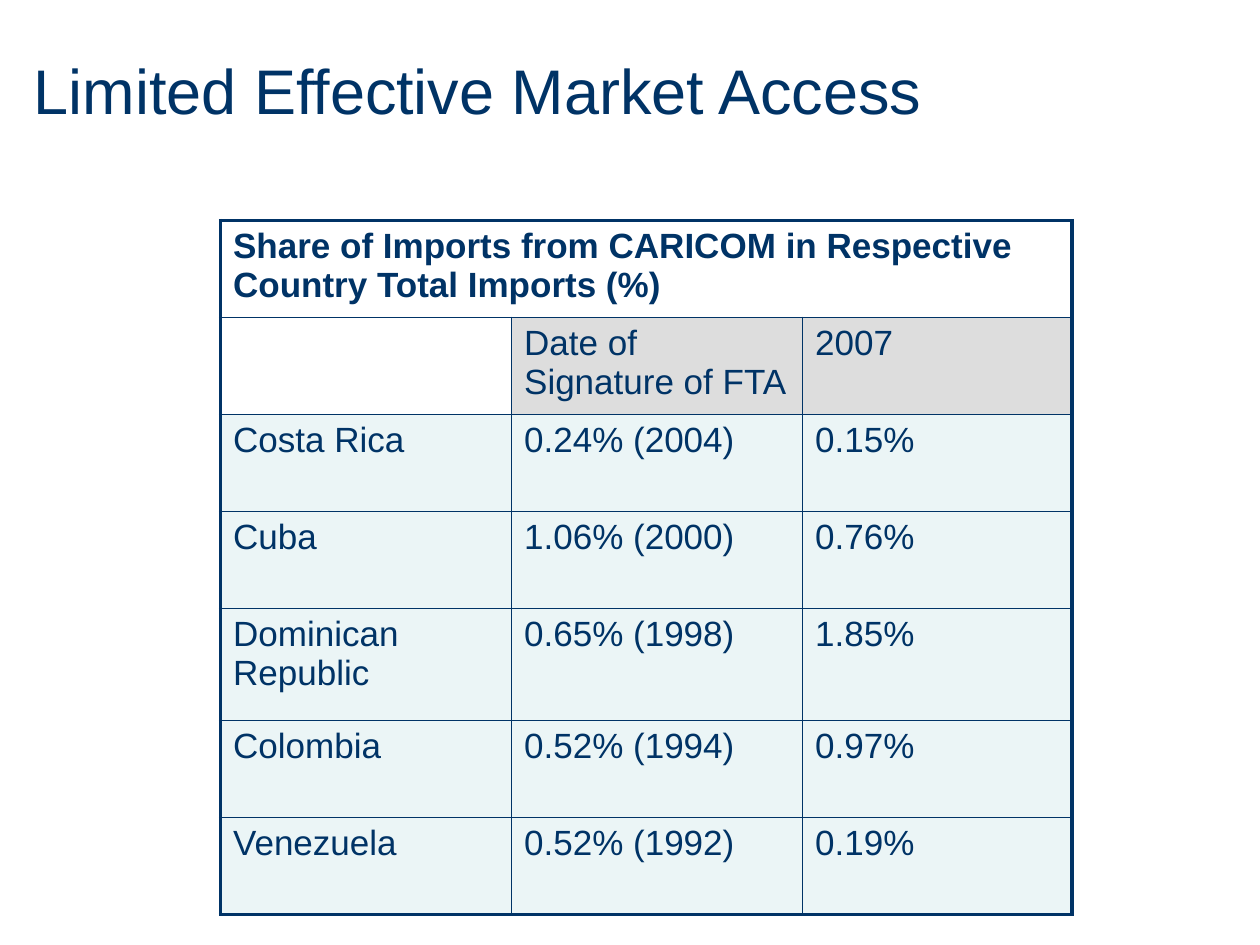
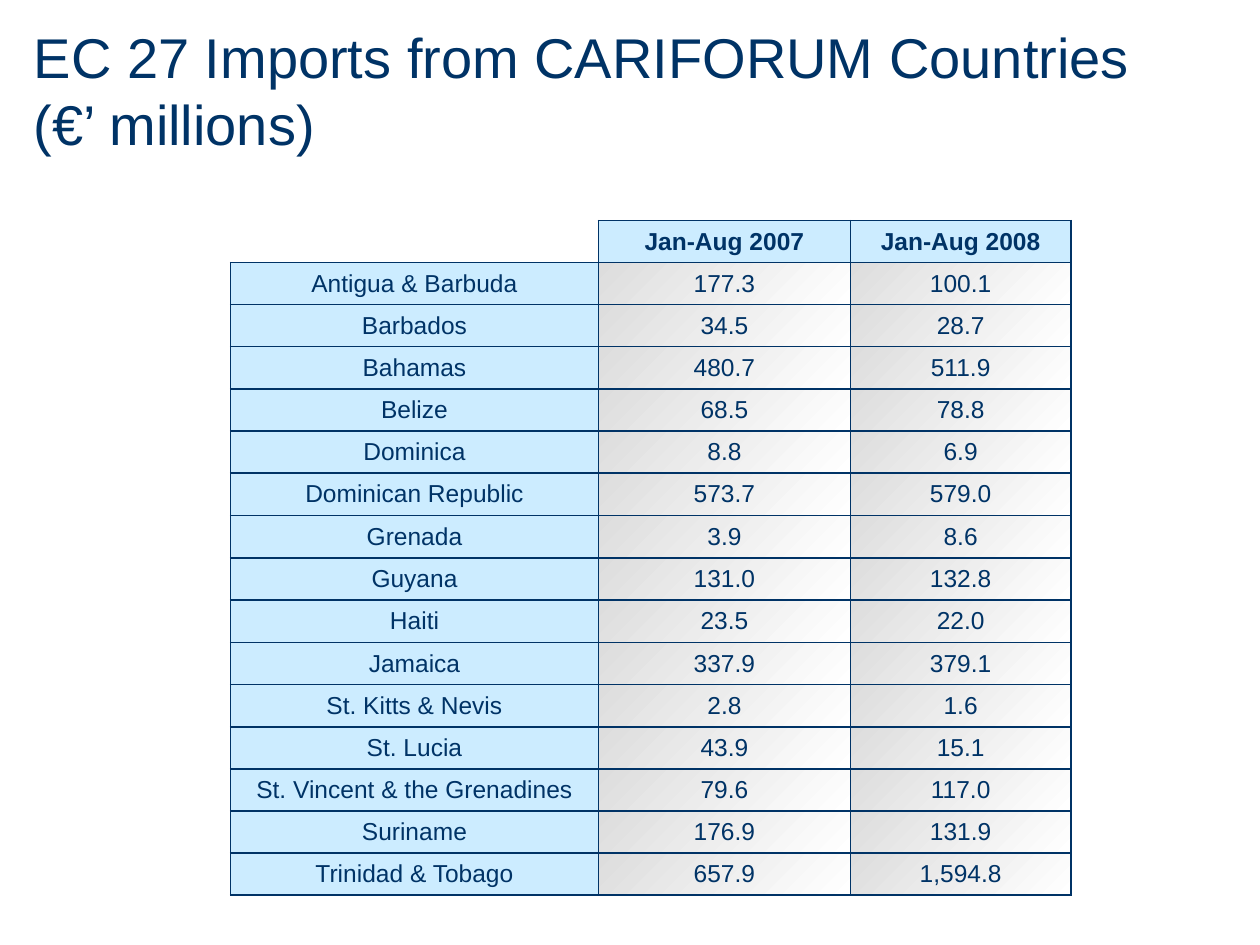
from lxml.etree import SubElement
from pptx import Presentation
from pptx.dml.color import RGBColor as RGB
from pptx.enum.text import MSO_ANCHOR as Anchor, PP_ALIGN as Align
from pptx.oxml.ns import qn
from pptx.util import Inches, Pt

HUES = {"navy": "003366", "grey": "DDDDDD", "mint": "D9EDEF",
        "sky": "CCECFF", "white": "FFFFFF"}

SHARES = [
    ("Share of Imports from CARICOM in Respective Country Total Imports (%)", "", ""),
    ("", "Date of Signature of FTA", "2007"),
    ("Costa Rica", "0.24% (2004)", "0.15%"),
    ("Cuba", "1.06% (2000)", "0.76%"),
    ("Dominican Republic", "0.65% (1998)", "1.85%"),
    ("Colombia", "0.52% (1994)", "0.97%"),
    ("Venezuela", "0.52% (1992)", "0.19%"),
]
IMPORTS = [
    ("", "Jan-Aug 2007", "Jan-Aug 2008"),
    ("Antigua & Barbuda", "177.3", "100.1"),
    ("Barbados", "34.5", "28.7"),
    ("Bahamas", "480.7", "511.9"),
    ("Belize", "68.5", "78.8"),
    ("Dominica", "8.8", "6.9"),
    ("Dominican Republic", "573.7", "579.0"),
    ("Grenada", "3.9", "8.6"),
    ("Guyana", "131.0", "132.8"),
    ("Haiti", "23.5", "22.0"),
    ("Jamaica", "337.9", "379.1"),
    ("St. Kitts & Nevis", "2.8", "1.6"),
    ("St. Lucia", "43.9", "15.1"),
    ("St. Vincent & the Grenadines", "79.6", "117.0"),
    ("Suriname", "176.9", "131.9"),
    ("Trinidad & Tobago", "657.9", "1,594.8"),
]


def hue(name):
    return RGB.from_string(HUES[name])


def style(font, size, bold=False):
    look = {"name": "Arial", "size": Pt(size), "bold": bold}
    for key, val in look.items():
        setattr(font, key, val)
    font.color.rgb = hue("navy")


def add_title(slide, text, size):
    box = slide.shapes.add_textbox(Inches(0.17), Inches(0.25), Inches(9.67), Inches(0.92))
    frame = box.text_frame
    frame.word_wrap = True
    frame.vertical_anchor = Anchor.MIDDLE
    para = frame.paragraphs[0]
    para.text = text
    for run in para.runs:
        style(run.font, size)


def add_grid(slide, left, top, cols, rows):
    frame = slide.shapes.add_table(len(rows), len(cols), Inches(left), Inches(top),
                                   Inches(sum(cols)), Inches(sum(rows)))
    grid = frame.table
    grid.first_row = grid.horz_banding = False
    for part, sizes in ((grid.columns, cols), (grid.rows, rows)):
        key = "width" if part is grid.columns else "height"
        for item, size in zip(part, sizes):
            setattr(item, key, Inches(size))
    return grid


def put_text(cell, text, size, bold, align, anchor):
    cell.vertical_anchor = anchor
    para = cell.text_frame.paragraphs[0]
    para.alignment = align
    if text:
        run = para.add_run()
        run.text = text
        style(run.font, size, bold)
    else:
        SubElement(para._p, qn("a:endParaRPr"), sz=str(size * 100))


def edge(cell, widths):
    props = cell._tc.get_or_add_tcPr()
    for side, width in zip("LRTB", widths):
        line = SubElement(props, qn(f"a:ln{side}"), w=str(Pt(width)))
        if width:
            fill = SubElement(line, qn("a:solidFill"))
            SubElement(fill, qn("a:srgbClr"), val=HUES["navy"])
        else:
            SubElement(line, qn("a:noFill"))


def paint(cell, name, alpha=None):
    cell.fill.solid()
    cell.fill.fore_color.rgb = hue(name)
    if alpha:
        tint = cell._tc.tcPr.find(qn("a:solidFill")).find(qn("a:srgbClr"))
        SubElement(tint, qn("a:alpha"), val=str(alpha * 1000))


def shade(cell):
    cell.fill.gradient()
    cell.fill.gradient_angle = 315
    for stop, name in zip(cell.fill.gradient_stops, ("grey", "white")):
        stop.color.rgb = hue(name)


def add_shares(slide):
    grid = add_grid(slide, 1.75, 1.75, (2.31, 2.31, 2.14), [0.77] * 4 + [0.89] + [0.77] * 2)
    grid.cell(0, 0).merge(grid.cell(0, 2))
    last = len(SHARES) - 1
    for r, row in enumerate(SHARES):
        for c, text in enumerate(row):
            cell = grid.cell(r, c)
            put_text(cell, text, 20, r == 0, Align.LEFT, Anchor.TOP)
            outer = (c == 0, c == 2 or r == 0, r == 0, r == last)
            edge(cell, [2.25 if out else 1 for out in outer])
            if r > 1:
                paint(cell, "mint", 50)
            elif r == 1 and c:
                paint(cell, "grey")
            else:
                cell.fill.background()


def add_imports(slide):
    tall = {0: 0.33, 5: 0.26, 6: 0.34, 7: 0.33, 9: 0.34}
    rows = [tall.get(r, 0.3) for r in range(len(IMPORTS))]
    grid = add_grid(slide, 1.83, 1.75, (2.92, 2, 1.75), rows)
    for r, row in enumerate(IMPORTS):
        for c, text in enumerate(row):
            cell = grid.cell(r, c)
            put_text(cell, text, 14, r == 0, Align.CENTER, Anchor.MIDDLE)
            edge(cell, (1, 1, 1, 1) if text else (0, 1, 0, 1))
            if not text:
                cell.fill.background()
            elif r and c:
                shade(cell)
            else:
                paint(cell, "sky")


def main():
    deck = Presentation()
    deck.slide_width, deck.slide_height = Inches(10), Inches(7.5)
    pages = (
        ("Limited Effective Market Access", 36, add_shares),
        ("EC 27 Imports from CARIFORUM Countries\v(€’ millions)", 32, add_imports),
    )
    for text, size, build in pages:
        slide = deck.slides.add_slide(deck.slide_layouts[6])
        add_title(slide, text, size)
        build(slide)
    deck.save("out.pptx")


if __name__ == "__main__":
    main()
